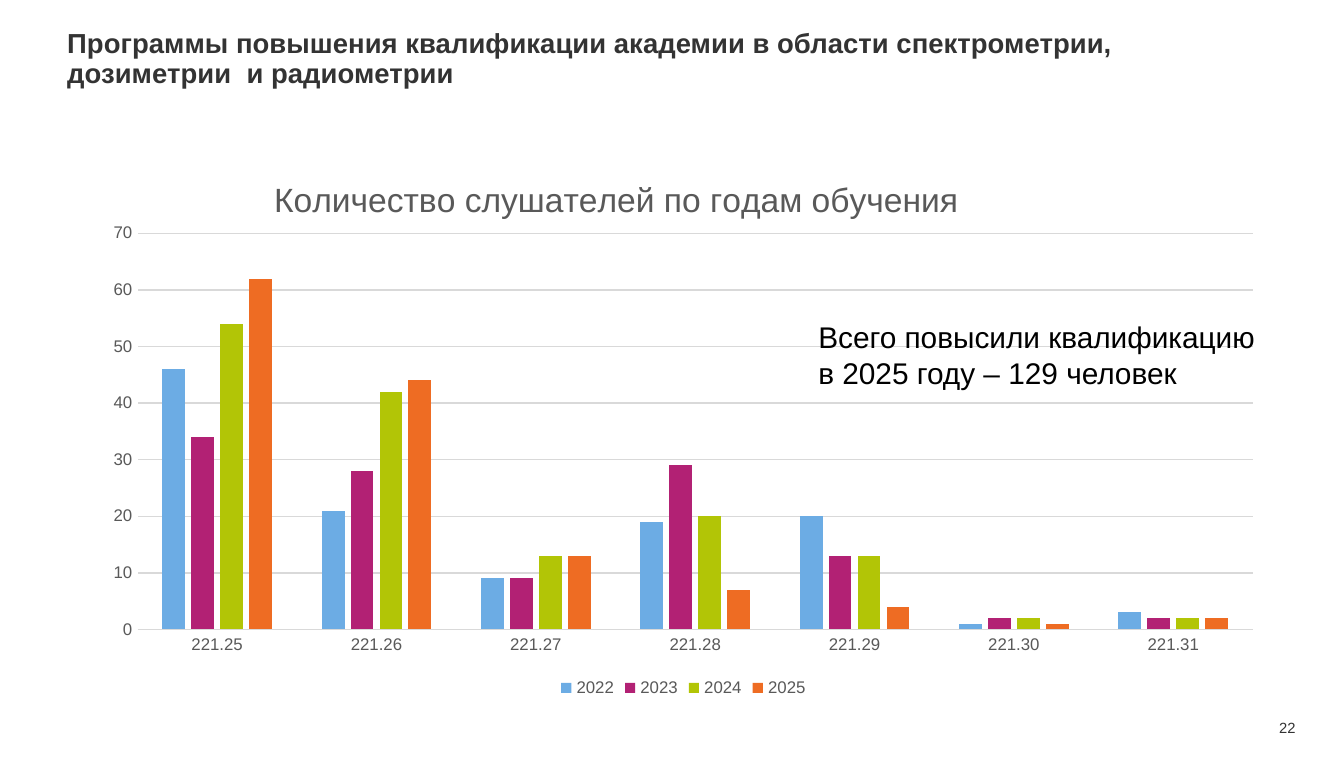
"""Build a slide with a clustered column chart of trainees by year."""
from lxml import etree
from pptx import Presentation
from pptx.chart.data import CategoryChartData
from pptx.dml.color import RGBColor
from pptx.enum.chart import XL_CHART_TYPE as CHART, XL_LEGEND_POSITION as LEGEND, XL_TICK_MARK as TICK
from pptx.enum.text import MSO_ANCHOR as ANCHOR, MSO_AUTO_SIZE as AUTO, PP_ALIGN as ALIGN
from pptx.oxml.ns import qn
from pptx.util import Inches, Pt


def write(tf, text, size, color, bold=False, align=None, spacing=None):
    for i, line in enumerate(text.split("\n")):
        p = tf.paragraphs[0] if i == 0 else tf.add_paragraph()
        p.alignment = align
        p.line_spacing = spacing
        r = p.add_run()
        r.text = line
        r.font.name, r.font.size, r.font.bold = "Arial", Pt(size), bold
        r.font.color.rgb = RGBColor.from_string(color)


def place(element, index, **values):
    for old in element.findall(qn("c:layout")):
        element.remove(old)
    layout = etree.Element(qn("c:layout"))
    element.insert(index, layout)
    manual = etree.SubElement(layout, qn("c:manualLayout"))
    for tag, val in values.items():
        etree.SubElement(manual, qn("c:" + tag)).set("val", str(val))


prs = Presentation()
prs.slide_width, prs.slide_height = Inches(10), Inches(5.63)
s = prs.slides.add_slide(prs.slide_layouts[5])

title = s.shapes.title
title.left, title.top, title.width, title.height = [Inches(v) for v in (0.5, 0.22, 9, 0.94)]
number = s.shapes.add_textbox(Inches(8.93), Inches(5.35), Inches(0.71), Inches(0.13))
for sp, anchor in ((title, ANCHOR.TOP), (number, ANCHOR.MIDDLE)):
    tf = sp.text_frame
    tf.margin_left = tf.margin_right = tf.margin_top = tf.margin_bottom = 0
    tf.word_wrap = True
    tf.auto_size = AUTO.NONE
    tf.vertical_anchor = anchor
write(title.text_frame,
      "Программы повышения квалификации академии в области спектрометрии, дозиметрии  и радиометрии",
      14.7, "333333", bold=True, align=ALIGN.LEFT, spacing=0.9)
write(number.text_frame, "22", 7.9, "333333", align=ALIGN.RIGHT)

trainees = [
    ("2022", "6CACE4", (46, 21, 9, 19, 20, 1, 3)),
    ("2023", "B22174", (34, 28, 9, 29, 13, 2, 2)),
    ("2024", "B2C506", (54, 42, 13, 20, 13, 2, 2)),
    ("2025", "EE6C23", (62, 44, 13, 7, 4, 1, 2)),
]
data = CategoryChartData()
data.categories = [f"221.{n}" for n in range(25, 32)]
for year, color, values in trainees:
    data.add_series(year, values)
chart = s.shapes.add_chart(CHART.COLUMN_CLUSTERED, Inches(0.67), Inches(1.02),
                           Inches(8.83), Inches(4.21), data).chart
chart.font.name, chart.font.size = "Arial", Pt(10)

chart.has_title = True
heading = chart.chart_title
write(heading.text_frame, "Количество слушателей по годам обучения", 18, "595959")
heading.include_in_layout = False
place(heading._element, 1, xMode="edge", yMode="edge", x=0.15, y=0.06)
place(chart._chartSpace.chart.plotArea, 0, layoutTarget="inner", xMode="edge", yMode="edge",
      x=0.04, y=0.17, w=0.94, h=0.7)

plot = chart.plots[0]
plot.gap_width, plot.overlap, plot.vary_by_categories = 219, -27, False
for series, (year, color, values) in zip(plot.series, trainees):
    series.format.fill.solid()
    series.format.fill.fore_color.rgb = RGBColor.from_string(color)

chart.has_legend = True
chart.legend.position = LEGEND.BOTTOM
chart.legend.include_in_layout = False
cat, val = chart.category_axis, chart.value_axis
val.minimum_scale, val.maximum_scale, val.major_unit = 0, 70, 10
val.has_major_gridlines = True
val.format.line.fill.background()
for axis in (cat, val):
    axis.major_tick_mark = axis.minor_tick_mark = TICK.NONE
for font in (cat.tick_labels.font, val.tick_labels.font, chart.legend.font):
    font.name, font.size = "Arial", Pt(9)
    font.color.rgb = RGBColor.from_string("595959")
for line in (cat.format.line, val.major_gridlines.format.line):
    line.color.rgb = RGBColor.from_string("D9D9D9")
    line.width = Pt(0.75)

total = s.shapes.add_textbox(Inches(5.99), Inches(2.32), Inches(3.81), Inches(0.64))
total.text_frame.word_wrap = True
total.text_frame.auto_size = AUTO.SHAPE_TO_FIT_TEXT
write(total.text_frame, "Всего повысили квалификацию\nв 2025 году – 129 человек", 16, "000000")

prs.save("out.pptx")
